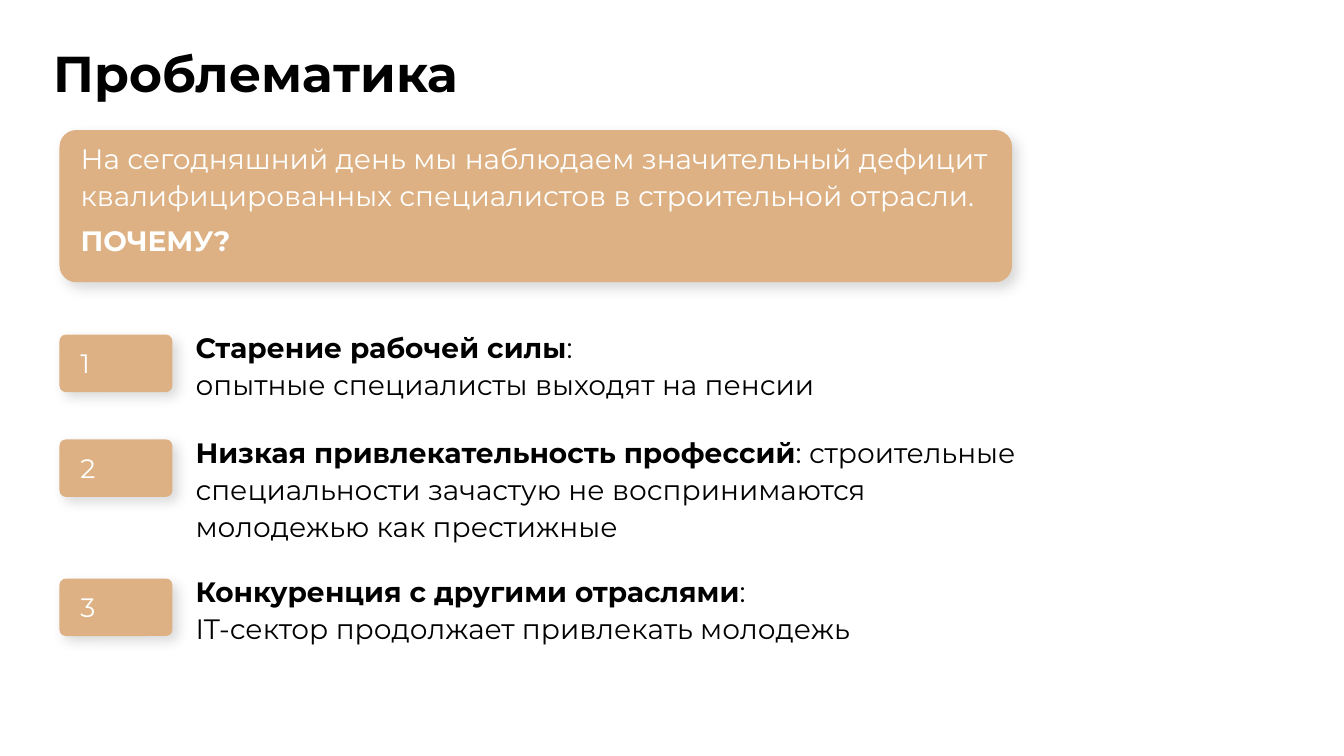
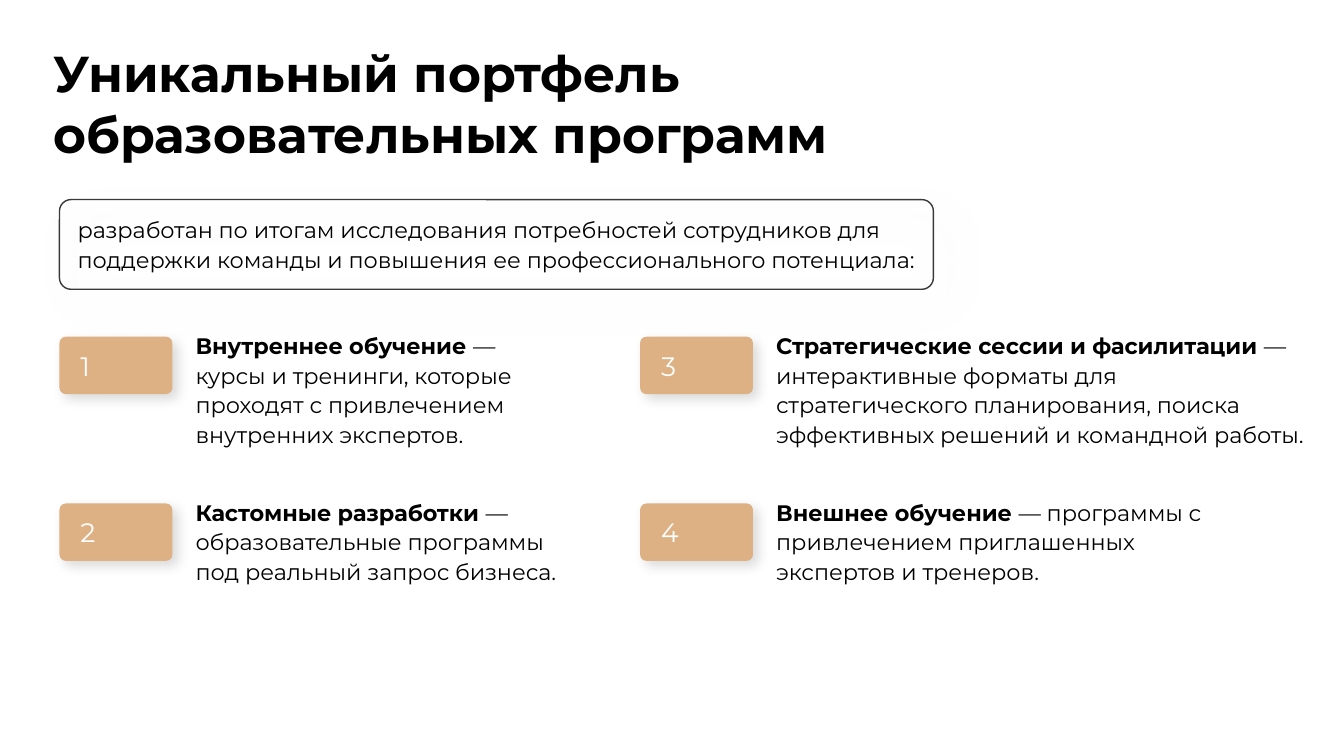
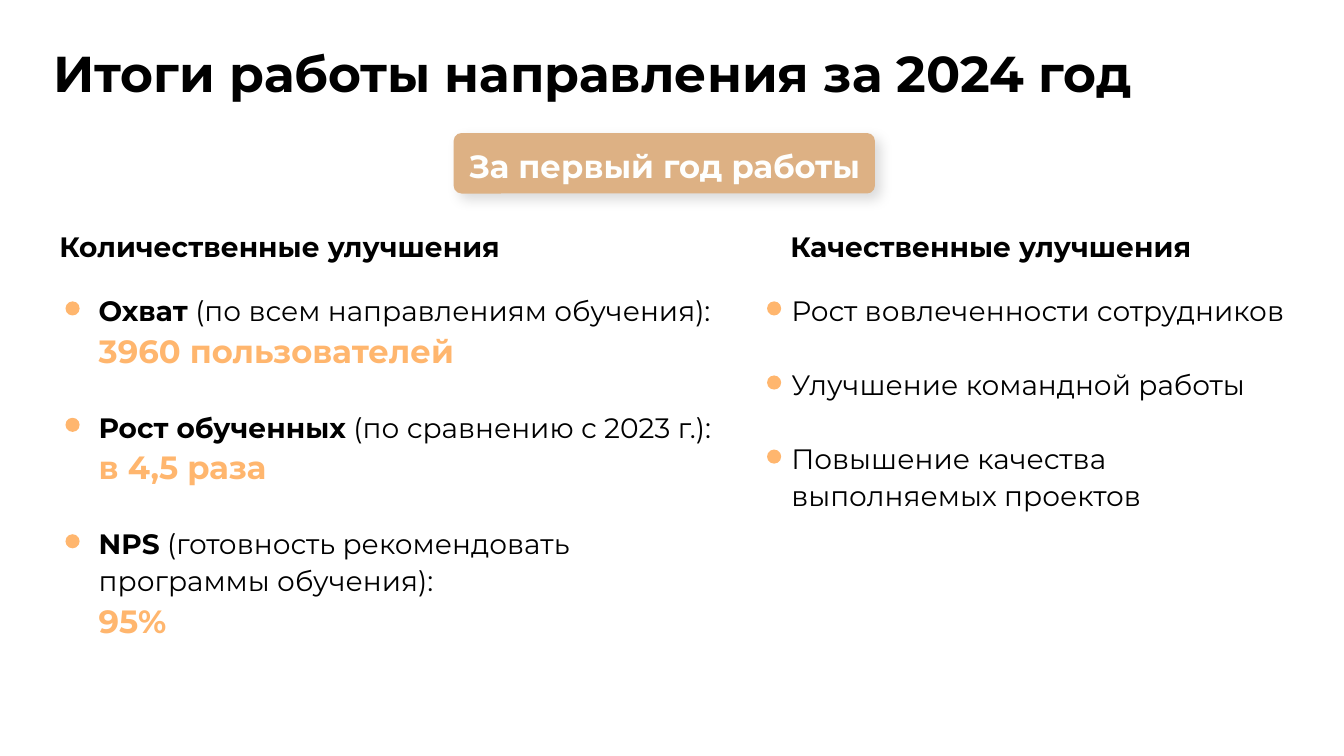
import pptx
import pptx.util
import pptx.dml.color
import pptx.enum.shapes
import pptx.enum.text
import pptx.oxml.ns
import lxml.etree

FONT = "Montserrat"
COLORS = {"ink": "000000", "light": "FEFFFE", "sand": "DDB184",
          "accent": "FFB66E", "outline": "393939"}
# Size, colour and weight of each kind of text
STYLES = {
    "title": (36, "ink", True),
    "body": (20, "ink", False),
    "strong": (20, "ink", True),
    "small": (16, "ink", False),
    "small strong": (16, "ink", True),
    "light": (20, "light", False),
    "light strong": (20, "light", True),
    "badge": (19, "light", False),
    "banner": (23, "light", True),
    "figure": (23, "accent", True),
}
# The grid has ten cells to the inch; boxes are (column, row, columns, rows)
COLUMNS, ROWS = 133.33, 75
BADGE_W, BADGE_H = 11.2, 5.7
SHAPES = pptx.enum.shapes.MSO_SHAPE
ANCHOR = pptx.enum.text.MSO_ANCHOR
ALIGN = pptx.enum.text.PP_ALIGN


def cells(n):
    return pptx.util.Inches(n / 10)


def place(box):
    return [cells(n) for n in box]


def rgb(name):
    return pptx.dml.color.RGBColor.from_string(COLORS[name])


def format_run(r, style):
    size, color, bold = STYLES[style]
    r.font.name = FONT
    r.font.size = pptx.util.Pt(size)
    r.font.bold = bold
    r.font.color.rgb = rgb(color)


def set_frame(tf, inset, anchor=ANCHOR.TOP):
    tf.word_wrap = True
    tf.auto_size = pptx.enum.text.MSO_AUTO_SIZE.NONE
    tf.vertical_anchor = anchor
    tf.margin_left = tf.margin_right = cells(inset)
    tf.margin_top = tf.margin_bottom = cells(inset)


def add_text(s, box, blocks, gap=0, align=ALIGN.LEFT):
    """Blocks hold paragraphs, which hold (text, style) runs; gap parts blocks."""
    tf = s.shapes.add_textbox(*place(box)).text_frame
    set_frame(tf, 0.1)
    p = None
    for block in blocks:
        for i, runs in enumerate(block):
            first = p is None
            p = tf.paragraphs[0] if first else tf.add_paragraph()
            p.alignment = align
            p.line_spacing = 1.1
            p.space_before = pptx.util.Pt(gap if i == 0 and not first else 0)
            for text, style in runs:
                r = p.add_run()
                r.text = text
                format_run(r, style)


def add_shadow(sp, blur, distance):
    effects = sp.element.spPr.find(pptx.oxml.ns.qn("a:effectLst"))
    shadow = lxml.etree.SubElement(
        effects, pptx.oxml.ns.qn("a:outerShdw"),
        blurRad=str(pptx.util.Pt(blur)), dist=str(pptx.util.Pt(distance)),
        dir="2700000", algn="tl", rotWithShape="0")
    color = lxml.etree.SubElement(shadow, pptx.oxml.ns.qn("a:srgbClr"), val=COLORS["ink"])
    lxml.etree.SubElement(color, pptx.oxml.ns.qn("a:alpha"), val="15000")


def add_filled(s, kind, box, color):
    sp = s.shapes.add_shape(kind, *place(box))
    sp.shadow.inherit = False
    sp.fill.solid()
    sp.fill.fore_color.rgb = rgb(color)
    sp.line.fill.background()
    return sp


def add_card(s, box, radius=0.11):
    sp = add_filled(s, SHAPES.ROUNDED_RECTANGLE, box, "sand")
    sp.adjustments[0] = radius
    add_shadow(sp, 9, 5.2)
    return sp


def add_titled_slide(prs, title, box):
    s = prs.slides.add_slide(prs.slide_layouts[5])
    sp = s.shapes.title
    sp.left, sp.top, sp.width, sp.height = place(box)
    tf = sp.text_frame
    tf.text = title
    set_frame(tf, 0.3)
    p = tf.paragraphs[0]
    p.alignment = ALIGN.LEFT
    format_run(p.runs[0], "title")
    return s


def add_item(s, number, x, y, width, paragraphs):
    """A numbered badge with its text to the right."""
    sp = add_card(s, (x, y, BADGE_W, BADGE_H))
    tf = sp.text_frame
    tf.text = str(number)
    set_frame(tf, 0.5, ANCHOR.MIDDLE)
    tf.margin_left = cells(1.9)
    p = tf.paragraphs[0]
    p.alignment = ALIGN.LEFT
    format_run(p.runs[0], "badge")
    add_text(s, (x + BADGE_W + 2.2, y - 0.8, width, 12), [paragraphs])


def add_results(s, box, heading, points, step, dot_dx, text_dx):
    """A heading over dotted points, the dots a fixed step apart."""
    x, y, w, h = box
    add_text(s, (x, y, 44.9, 3.8), [[[(heading, "strong")]]])
    add_text(s, (x + text_dx, y + 6.4, w, h - 6.4), points, gap=26.5)
    for i in range(len(points)):
        add_filled(s, SHAPES.OVAL, (x + dot_dx, y + 7.6 + i * step, 1.4, 1.4), "accent")


def problem_slide(prs):
    s = add_titled_slide(prs, "Проблематика", (5, 3.9, 92.2, 12.5))
    # Question card
    x, y = 5.9, 12.9
    add_card(s, (x, y, 94.5, 15.1))
    add_text(s, (x + 2, y + 0.7, 96, 12.9), [
        [[("На сегодняшний день мы наблюдаем значительный дефицит "
           "квалифицированных специалистов в строительной отрасли.", "light")]],
        [[("ПОЧЕМУ?", "light strong")]],
    ], gap=6)
    # Reasons
    reasons = [
        (33.2, [[("Старение рабочей силы", "strong"), (":", "body")],
                [("опытные специалисты выходят на пенсии", "body")]]),
        (43.6, [[("Низкая привлекательность профессий", "strong"),
                 (": строительные специальности зачастую не воспринимаются "
                  "молодежью как престижные", "body")]]),
        (57.4, [[("Конкуренция с другими отраслями", "strong"), (":", "body")],
                [("IT-сектор продолжает привлекать молодежь", "body")]]),
    ]
    for number, (row, paragraphs) in enumerate(reasons, 1):
        add_item(s, number, x, row, 82.8, paragraphs)


def portfolio_slide(prs):
    s = add_titled_slide(prs, "Уникальный портфель образовательных программ",
                         (5, 3.9, 92.2, 12.5))
    # Outlined introduction
    x, y = 5.9, 19.8
    sp = s.shapes.add_shape(SHAPES.ROUNDED_RECTANGLE, *place((x, y, 86.7, 8.9)))
    sp.adjustments[0] = 0.13
    sp.shadow.inherit = False
    sp.fill.background()
    sp.line.color.rgb = rgb("outline")
    sp.line.width = pptx.util.Pt(1)
    add_shadow(sp, 30, 15.4)
    add_text(s, (x + 1.7, y + 1.3, 84.1, 6.1), [[[(
        "разработан по итогам исследования потребностей сотрудников для "
        "поддержки команды и повышения ее профессионального потенциала:", "small")]]])
    # Programmes, down the columns of a two by two grid
    programmes = [
        (35.5, "Внутреннее обучение ",
         "— курсы и тренинги, которые проходят с привлечением внутренних экспертов."),
        (38.2, "Кастомные разработки ",
         "— образовательные программы под реальный запрос бизнеса."),
        (53.4, "Стратегические сессии и фасилитации ",
         "— интерактивные форматы для стратегического планирования, поиска "
         "эффективных решений и командной работы."),
        (47.1, "Внешнее обучение ",
         "— программы с привлечением приглашенных экспертов и тренеров."),
    ]
    for i, (width, name, detail) in enumerate(programmes):
        column, row = divmod(i, 2)
        add_item(s, i + 1, x + column * 57.6, 33.4 + row * 16.55, width,
                 [[(name, "small strong"), (detail, "small")]])


def results_slide(prs):
    s = add_titled_slide(prs, "Итоги работы направления за 2024 год", (5, 3.9, 116.7, 7.8))
    # Banner
    x, y, w, h = 45, 13.2, 41.8, 6
    add_card(s, (x, y, w, h), radius=0.13)
    add_text(s, (x - 4.7, y + 0.8, w + 9.5, 4.4),
             [[[("За первый год работы", "banner")]]], align=ALIGN.CENTER)
    # Result columns
    measures = [
        ("Охват", " (по всем направлениям обучения):", "3960 пользователей"),
        ("Рост обученных", " (по сравнению с 2023 г.):", "в 4,5 раза"),
        ("NPS", " (готовность рекомендовать программы обучения):", "95%"),
    ]
    add_results(s, (5.8, 22.3, 63, 41.7), "Количественные улучшения",
                [[[(name, "strong"), (detail, "body")], [(value, "figure")]]
                 for name, detail, value in measures],
                step=11.55, dot_dx=0.7, text_dx=3.9)
    qualities = ["Рост вовлеченности сотрудников", "Улучшение командной работы",
                 "Повышение качества выполняемых проектов"]
    add_results(s, (78.3, 22.3, 50.6, 28.8), "Качественные улучшения",
                [[[(quality, "body")]] for quality in qualities],
                step=7.35, dot_dx=-2.2, text_dx=0.1)


def main():
    prs = pptx.Presentation()
    prs.slide_width, prs.slide_height = cells(COLUMNS), cells(ROWS)
    problem_slide(prs)
    portfolio_slide(prs)
    results_slide(prs)
    prs.save("out.pptx")


if __name__ == "__main__":
    main()
